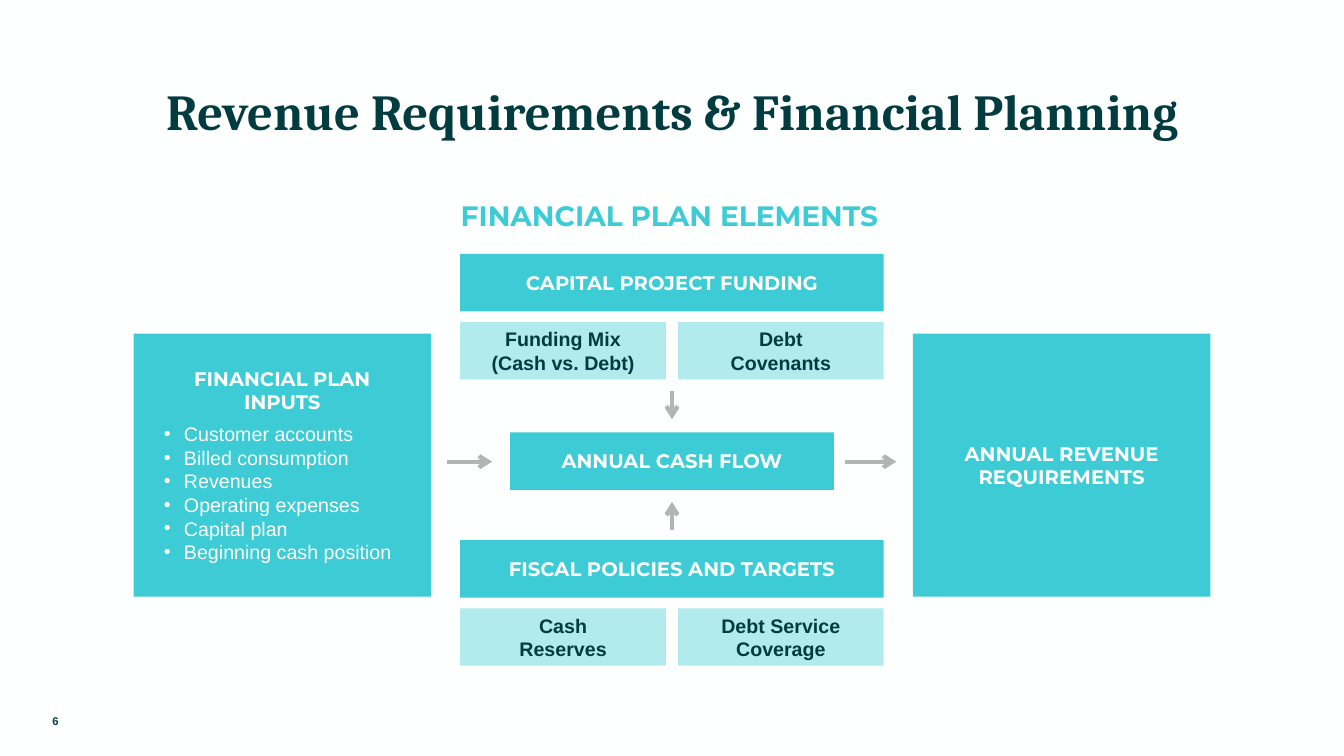
from lxml import etree
from pptx import Presentation
from pptx import util as u
from pptx.dml.color import RGBColor
from pptx.enum import shapes, text
from pptx.oxml.ns import qn

WIDTH, HEIGHT = 13.33, 7.5
DARK, TEAL, PALE, GREY, WHITE = "023B40", "3DCCD5", "B1EBEE", "B4B4B4", "FEFFFF"
HEAD_FONT, BODY_FONT, TITLE_FONT = "Montserrat", "Arial", "Cambria"

TITLE = "Revenue Requirements & Financial Planning"
SUBTITLE = "FINANCIAL PLAN ELEMENTS"
PAGE_NUMBER = "6"
INPUTS_HEAD = "FINANCIAL PLAN INPUTS"
INPUTS = ["Customer accounts", "Billed consumption", "Revenues",
          "Operating expenses", "Capital plan", "Beginning cash position"]
RESULT = "ANNUAL REVENUE REQUIREMENTS"
CASH_FLOW = "ANNUAL CASH FLOW"
GROUPS = [  # top of heading bar, heading, two lines for each element
    (2.52, "CAPITAL PROJECT FUNDING",
     [("Funding Mix", "(Cash vs. Debt)"), ("Debt", "Covenants")]),
    (5.36, "FISCAL POLICIES AND TARGETS",
     [("Cash", "Reserves"), ("Debt Service", "Coverage")]),
]

MIDDLE = WIDTH / 2
BAR_WIDTH, BAR_HEIGHT, ROW_STEP = 4.2, 0.57, 0.675
HALF_WIDTH = 2.04
FLOW_WIDTH, FLOW_TOP = 3.21, 4.29
SIDE_WIDTH, SIDE_HEIGHT, SIDE_TOP, SIDE_GAP = 2.95, 2.61, 3.31, 0.29
BAR_LEFT = MIDDLE - BAR_WIDTH / 2
BAR_RIGHT = MIDDLE + BAR_WIDTH / 2
ARROW_Y = 4.58
ARROWS = [  # from x, from y, to x, to y
    (MIDDLE, 3.88, MIDDLE, 4.16),
    (MIDDLE, 5.26, MIDDLE, 4.98),
    (4.43, ARROW_Y, 4.88, ARROW_Y),
    (8.38, ARROW_Y, 8.89, ARROW_Y),
]


def color(value):
    return RGBColor.from_string(value)


def place(shape, left, top, width, height):
    shape.left, shape.top = u.Inches(left), u.Inches(top)
    shape.width, shape.height = u.Inches(width), u.Inches(height)


def set_frame(shape, insets, anchor):
    """Set insets (left, top, right, bottom) and anchor; return the frame."""
    frame = shape.text_frame
    frame.auto_size = text.MSO_AUTO_SIZE.NONE
    frame.word_wrap = True
    frame.vertical_anchor = anchor
    (frame.margin_left, frame.margin_top,
     frame.margin_right, frame.margin_bottom) = map(u.Inches, insets)
    return frame


def write(frame, lines, size, font, fill, bold=True, align=text.PP_ALIGN.CENTER):
    """Add lines as paragraphs, starting in the first one if it is empty."""
    added = []
    for line in lines:
        first = frame.paragraphs[0]
        para = frame.add_paragraph() if first.runs else first
        para.alignment = align
        para.space_before = u.Pt(0)
        span = para.add_run()
        span.text = line
        span.font.size, span.font.name, span.font.bold = u.Pt(size), font, bold
        span.font.color.rgb = color(fill)
        added.append(para)
    return added


def set_bullet(para, mark=None):
    props = para._p.get_or_add_pPr()
    indent = u.Inches(0.2) if mark else 0
    props.set("marL", str(indent))
    props.set("indent", str(-indent))
    if mark:
        tint = etree.SubElement(props, qn("a:buClr"))
        etree.SubElement(tint, qn("a:srgbClr"), val=WHITE)
        etree.SubElement(props, qn("a:buFont"), typeface=BODY_FONT)
        etree.SubElement(props, qn("a:buChar"), char=mark)
    else:
        etree.SubElement(props, qn("a:buNone"))


def paint_box(box, fill):
    box.fill.solid()
    box.fill.fore_color.rgb = color(fill)
    box.line.fill.background()
    return set_frame(box, (0.3, 0.05, 0.3, 0.05), text.MSO_ANCHOR.MIDDLE)


def add_box(page, area, lines, fill=TEAL, font=HEAD_FONT, ink=WHITE):
    box = page.shapes.add_shape(shapes.MSO_SHAPE.RECTANGLE, *map(u.Inches, area))
    box.shadow.inherit = False
    write(paint_box(box, fill), lines, 14, font, ink)


def add_arrow(page, ends):
    arrow = page.shapes.add_connector(
        shapes.MSO_CONNECTOR.STRAIGHT, *map(u.Inches, ends))
    arrow.line.color.rgb = color(GREY)
    arrow.line.width = u.Pt(3)
    etree.SubElement(arrow.line._get_or_add_ln(), qn("a:tailEnd"), type="arrow")
    etree.SubElement(arrow._element.spPr, qn("a:effectLst"))


def add_label(page, area, insets, anchor, line, size, font, ink):
    label = page.shapes.add_textbox(*map(u.Inches, area))
    frame = set_frame(label, insets, anchor)
    return frame, write(frame, [line], size, font, ink)[0]


def main():
    deck = Presentation()
    deck.slide_width, deck.slide_height = u.Inches(WIDTH), u.Inches(HEIGHT)
    page = deck.slides.add_slide(deck.slide_layouts[1])
    page.background.fill.solid()
    page.background.fill.fore_color.rgb = color(WHITE)

    title, inputs = page.placeholders
    place(title, 0.79, 0.58, 11.75, 0.92)
    frame = set_frame(title, (0, 0.21, 0, 0), text.MSO_ANCHOR.TOP)
    write(frame, [TITLE], 36, TITLE_FONT, DARK)

    place(inputs, BAR_LEFT - SIDE_GAP - SIDE_WIDTH, SIDE_TOP, SIDE_WIDTH, SIDE_HEIGHT)
    frame = paint_box(inputs, TEAL)
    head = write(frame, [INPUTS_HEAD], 14, HEAD_FONT, WHITE)[0]
    head.space_after = u.Pt(6)
    set_bullet(head)
    for para in write(frame, INPUTS, 14, BODY_FONT, WHITE, False, text.PP_ALIGN.LEFT):
        set_bullet(para, "•")

    for top, heading, elements in GROUPS:
        add_box(page, (BAR_LEFT, top, BAR_WIDTH, BAR_HEIGHT), [heading])
        for left, lines in zip((BAR_LEFT, BAR_RIGHT - HALF_WIDTH), elements):
            add_box(page, (left, top + ROW_STEP, HALF_WIDTH, BAR_HEIGHT),
                    lines, PALE, BODY_FONT, DARK)
    add_box(page, (MIDDLE - FLOW_WIDTH / 2, FLOW_TOP, FLOW_WIDTH, BAR_HEIGHT),
            [CASH_FLOW])
    add_box(page, (BAR_RIGHT + SIDE_GAP, SIDE_TOP, SIDE_WIDTH, SIDE_HEIGHT), [RESULT])
    for ends in ARROWS:
        add_arrow(page, ends)

    frame, para = add_label(page, (4.42, 1.83, 4.68, 0.48), (0, 0.04, 0.24, 0.04),
                            text.MSO_ANCHOR.TOP, SUBTITLE, 20, HEAD_FONT, TEAL)
    frame.word_wrap = False
    para.line_spacing, para.space_before = 1.3, u.Pt(10)
    add_label(page, (0, 6.95, 1.1, 0.4), (0.1, 0.05, 0.1, 0.05),
              text.MSO_ANCHOR.MIDDLE, PAGE_NUMBER, 8, BODY_FONT, DARK)
    deck.save("out.pptx")


if __name__ == "__main__":
    main()
